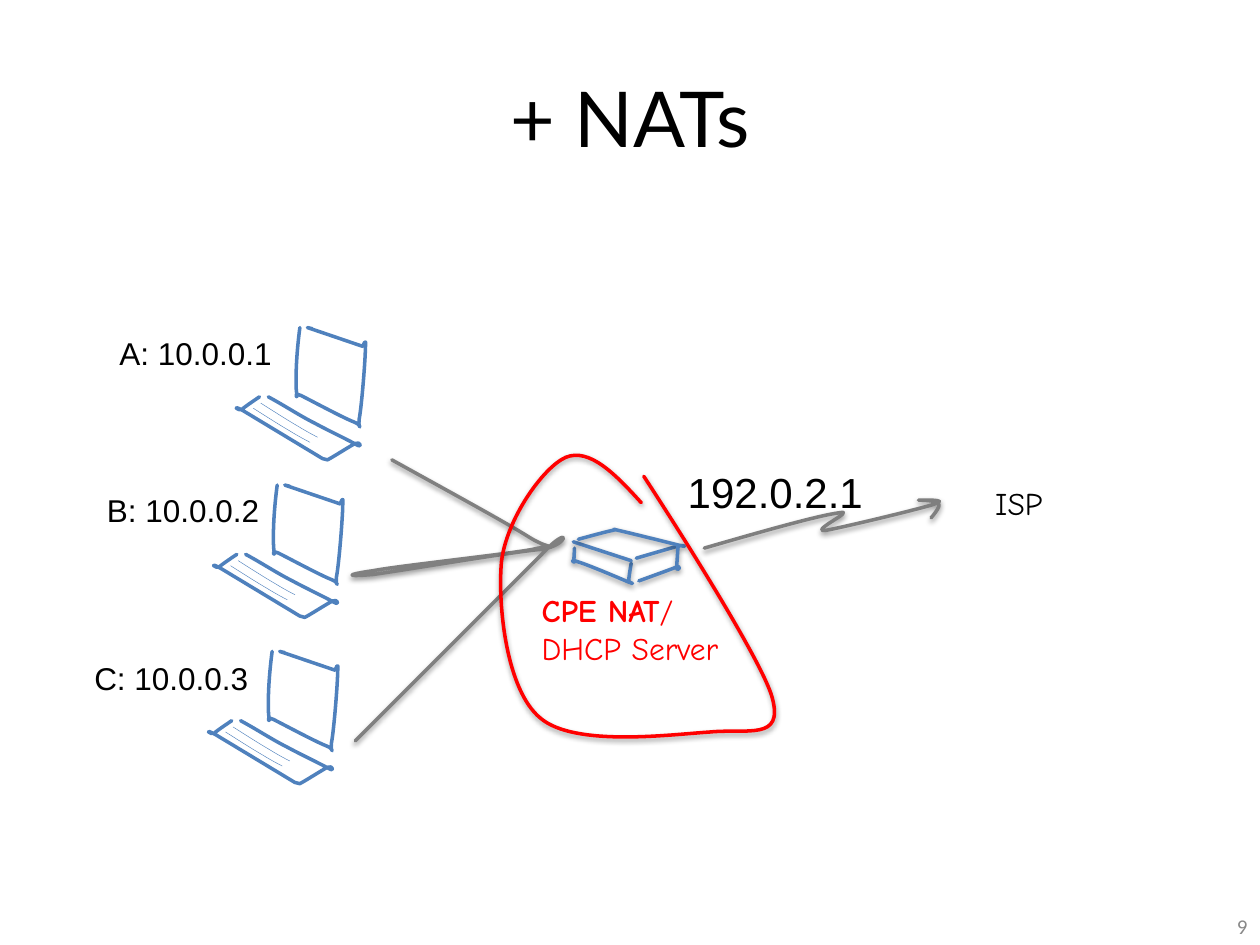
from lxml import etree
from pptx import Presentation
from pptx.dml.color import RGBColor
from pptx.enum.shapes import MSO_CONNECTOR
from pptx.enum.text import MSO_ANCHOR, MSO_AUTO_SIZE, PP_ALIGN
from pptx.oxml.ns import qn
from pptx.util import Inches, Pt

STRAIGHT = MSO_CONNECTOR.STRAIGHT
TOP, MIDDLE = MSO_ANCHOR.TOP, MSO_ANCHOR.MIDDLE
LEFT, CENTER, RIGHT = PP_ALIGN.LEFT, PP_ALIGN.CENTER, PP_ALIGN.RIGHT
GROW, FIXED = MSO_AUTO_SIZE.SHAPE_TO_FIT_TEXT, MSO_AUTO_SIZE.NONE
BLUE, GRAY, LINK_GRAY = "4F81BD", "808080", "7F7F7F"
RED, BLACK, PALE = "FF0000", "000000", "898989"

SCREEN = [
    (2.2, 3.85), (2.18, 4, 2.17, 4.15, 2.17, 4.24), (2.17, 4.33, 2.17, 4.37, 2.18, 4.39),
    (2.18, 4.42, 2.14, 4.36, 2.21, 4.39), (2.29, 4.43, 2.55, 4.57, 2.63, 4.6),
    (2.71, 4.63, 2.66, 4.68, 2.67, 4.58), (2.69, 4.48, 2.72, 4.1, 2.72, 4.01),
    (2.73, 3.91, 2.7, 4, 2.7, 4), (2.26, 3.85), (2.3, 3.86),
]
KEYBOARD = [
    (1.95, 4.4), (2.08, 4.47, 2.2, 4.55, 2.32, 4.61), (2.43, 4.67, 2.6, 4.75, 2.65, 4.78),
    (2.7, 4.81, 2.68, 4.75, 2.64, 4.77), (2.6, 4.79, 2.46, 4.88, 2.42, 4.9),
    (2.38, 4.89), (1.75, 4.51), (1.64, 4.45, 1.72, 4.52, 1.74, 4.5),
    (1.76, 4.48, 1.88, 4.4, 1.88, 4.4),
]
KEY_ROW = [(1.83, 4.49), (1.94, 4.56, 2.05, 4.63, 2.12, 4.67), (2.2, 4.72, 2.28, 4.76, 2.28, 4.76)]
ROUTER_FRONT = [
    (4.56, 4.35), (4.56, 4.39, 4.55, 4.44, 4.56, 4.46), (4.56, 4.47, 4.51, 4.43, 4.59, 4.46),
    (4.66, 4.48, 4.92, 4.59, 4.99, 4.62), (5.06, 4.64, 4.99, 4.63, 4.99, 4.61),
    (4.99, 4.58, 5.01, 4.47, 5.01, 4.47),
]
ROUTER_BACK = [
    (4.59, 4.28), (4.7, 4.25, 4.81, 4.22, 4.86, 4.21), (4.92, 4.2, 4.82, 4.19, 4.91, 4.21),
    (5, 4.23, 5.32, 4.31, 5.4, 4.33), (5.48, 4.35, 5.39, 4.31, 5.38, 4.34),
    (5.38, 4.37, 5.37, 4.49, 5.37, 4.51), (5.37, 4.54, 5.42, 4.49, 5.37, 4.5),
    (5.32, 4.52, 5.07, 4.61, 5.07, 4.61),
]
HOME_WIRES = [
    (3.11, 3.65), (3.56, 3.9, 4.02, 4.15, 4.21, 4.27), (4.39, 4.38, 4.44, 4.31, 4.23, 4.36),
    (4.02, 4.4, 3.17, 4.49, 2.96, 4.53), (2.75, 4.56, 2.73, 4.58, 2.96, 4.56),
    (3.18, 4.53, 4.07, 4.38, 4.3, 4.36), (4.52, 4.33, 4.54, 4.14, 4.3, 4.4),
    (4.05, 4.65, 2.82, 5.88, 2.82, 5.88),
]
ISP_ARROW = [
    (5.59, 4.35), (6.04, 4.22, 6.5, 4.09, 6.66, 4.07), (6.81, 4.04, 6.42, 4.22, 6.55, 4.21),
    (6.67, 4.19, 7.3, 4.04, 7.42, 4), (7.55, 3.96, 7.29, 3.97, 7.29, 3.97),
    (7.3, 3.97, 7.44, 3.97, 7.45, 4), (7.47, 4.02, 7.39, 4.11, 7.39, 4.11),
]
NAT_LOOP = [
    (5.09, 3.99), (4.89, 3.77, 4.68, 3.55, 4.49, 3.63), (4.31, 3.71, 4.02, 4.12, 3.98, 4.46),
    (3.95, 4.81, 4.02, 5.48, 4.29, 5.7), (4.56, 5.93, 5.32, 5.83, 5.63, 5.81),
    (5.94, 5.78, 6.22, 5.88, 6.13, 5.54), (6.04, 5.2, 5.11, 3.78, 5.11, 3.78),
]
LAPTOP_SHIFTS = [(0, 0), (-0.04, 1.32), (0.18, -1.25)]


def color(value):
    return RGBColor.from_string(value)


def bend(shape, segments):
    steps = iter(list(shape._element.iter(qn("a:lnTo"))))
    for segment in segments[1:]:
        first = next(steps)
        if len(segment) == 6:
            first.tag = qn("a:cubicBezTo")
            for handle in (next(steps), next(steps)):
                first.append(handle[0])
                handle.getparent().remove(handle)


class Sketch:
    def __init__(self, page):
        self.page = page

    def finish(self, shape, stroke, width, shadow):
        shape.line.color.rgb = color(stroke)
        shape.line.width = Pt(width)
        properties = shape._element.spPr
        properties.find(qn("a:ln")).set("cap", "rnd")
        effects = etree.SubElement(properties, qn("a:effectLst"))
        if shadow:
            outer = etree.SubElement(effects, qn("a:outerShdw"), blurRad="40000",
                                     dist="20000", dir="5400000", rotWithShape="0")
            tint = etree.SubElement(outer, qn("a:srgbClr"), val=BLACK)
            etree.SubElement(tint, qn("a:alpha"), val="38000")

    def stroke(self, segments, stroke, width=2, shadow=True, shift=(0, 0)):
        points = [(Inches(x + shift[0]), Inches(y + shift[1]))
                  for segment in segments for x, y in zip(segment[::2], segment[1::2])]
        builder = self.page.shapes.build_freeform(*points[0])
        builder.add_line_segments(points[1:], close=False)
        shape = builder.convert_to_shape()
        bend(shape, segments)
        shape.fill.background()
        self.finish(shape, stroke, width, shadow)

    def edge(self, start, end, stroke):
        ends = [Inches(value) for value in start + end]
        self.finish(self.page.shapes.add_connector(STRAIGHT, *ends), stroke, 2, True)

    def laptop(self, shift):
        for segments in (SCREEN, KEYBOARD):
            self.stroke(segments, BLUE, shadow=False, shift=shift)
        for dx, dy in ((0, 0), (0.06, -0.04)):
            self.stroke(KEY_ROW, BLUE, 0.25, False, (shift[0] + dx, shift[1] + dy))

    def text(self, frame, lines, size=18, font="Arial", ink=BLACK,
             align=LEFT, anchor=TOP, wrap=False):
        box = self.page.shapes.add_textbox(*map(Inches, frame))
        layout = {"word_wrap": wrap, "auto_size": FIXED if wrap else GROW, "vertical_anchor": anchor}
        for name, value in layout.items():
            setattr(box.text_frame, name, value)
        for index, line in enumerate(lines):
            para = box.text_frame.add_paragraph() if index else box.text_frame.paragraphs[0]
            para.alignment = align
            for words, bold in line:
                span = para.add_run()
                span.text = words
                for name, value in {"name": font, "size": Pt(size), "bold": bold}.items():
                    setattr(span.font, name, value)
                span.font.color.rgb = color(ink)


def main():
    deck = Presentation()
    deck.slide_width, deck.slide_height = Inches(10), Inches(7.5)
    sketch = Sketch(deck.slides.add_slide(deck.slide_layouts[6]))

    sketch.text((0.29, 0.3, 9.42, 1.25), [[("+ NATs", False)]], 44, "Lato",
                align=CENTER, anchor=MIDDLE, wrap=True)
    sketch.text((7.67, 7.15, 2.33, 0.4), [[("9", False)]], 12, "Calibri", PALE,
                RIGHT, MIDDLE, True)
    for shift in LAPTOP_SHIFTS:
        sketch.laptop(shift)
    sketch.stroke(ROUTER_FRONT, BLUE)
    sketch.edge((4.55, 4.3), (5.01, 4.45), BLUE)
    sketch.edge((5.05, 4.43), (5.36, 4.34), BLUE)
    sketch.stroke(ROUTER_BACK, BLUE)
    sketch.stroke(HOME_WIRES, GRAY)
    hosts = [("A: 10.0.0.1", 0.85, 2.6, 1.44), ("B: 10.0.0.2", 0.75, 3.85, 1.42),
             ("C: 10.0.0.3", 0.65, 5.18, 1.44)]
    for label, left, top, width in hosts:
        sketch.text((left, top, width, 0.4), [[(label, False)]])
    sketch.text((4.2, 4.64, 2.01, 1.01),
                [[("CPE NAT", True), ("/", False)], [("DHCP Server", False)]],
                font="Comic Neue", ink=RED)
    sketch.stroke(ISP_ARROW, LINK_GRAY)
    sketch.text((5.36, 3.65, 1.61, 0.5), [[("192.0.2.1", False)]], 24)
    sketch.text((7.8, 3.79, 0.69, 0.4), [[("ISP", False)]], font="Comic Neue")
    sketch.stroke(NAT_LOOP, RED)
    deck.save("out.pptx")


if __name__ == "__main__":
    main()
